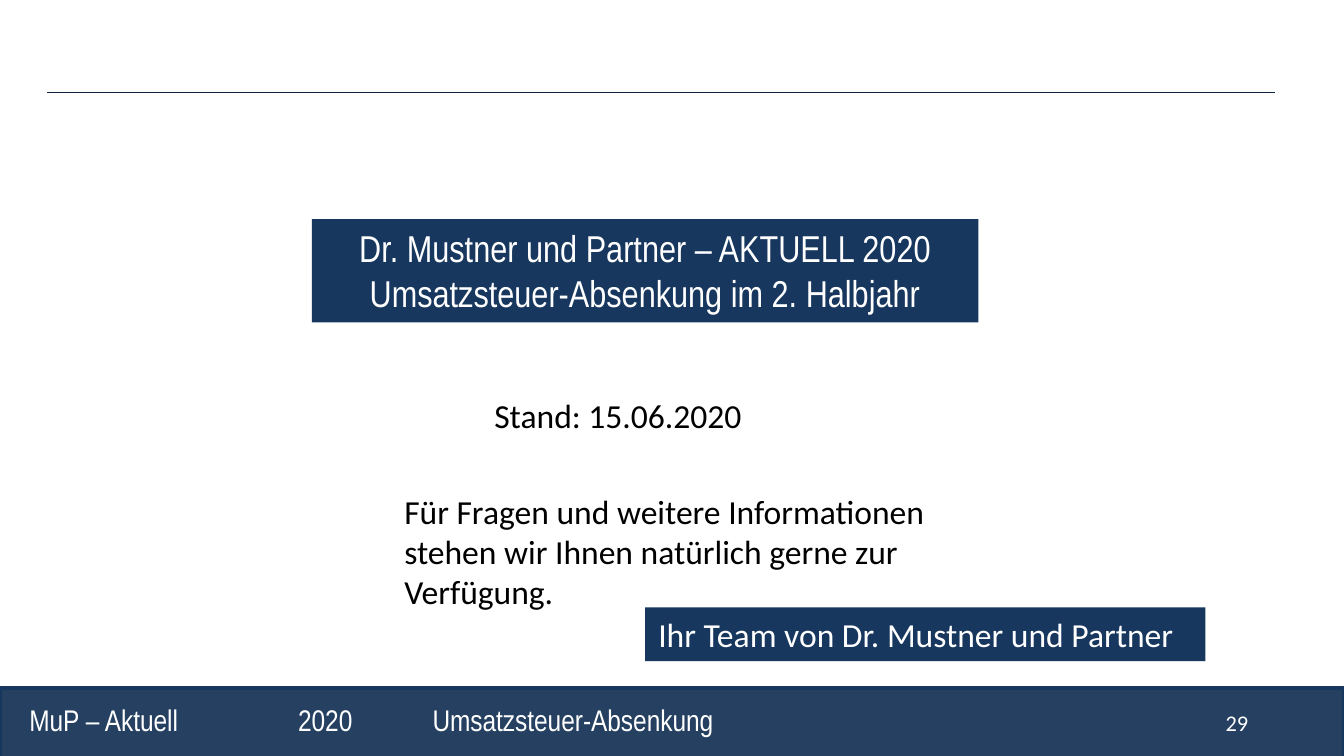
import pptx
import pptx.util
from lxml import etree
from pptx.dml.color import RGBColor
from pptx.enum.shapes import MSO_CONNECTOR, MSO_SHAPE
from pptx.enum.text import MSO_ANCHOR, PP_ALIGN
from pptx.oxml.ns import qn

Inches, Pt = pptx.util.Inches, pptx.util.Pt

COLORS = {
    "rule": "0F243E",
    "band": "254061",
    "navy": "17375E",
    "white": "FFFFFF",
    "black": "000000",
}
NARROW, BODY = "Arial Narrow", "Calibri"
FIRM = "Dr. Mustner und Partner"


def color(name):
    return RGBColor.from_string(COLORS[name])


def add_tab_stops(paragraph, stops):
    tab_list = etree.SubElement(paragraph._p.get_or_add_pPr(), qn("a:tabLst"))
    for stop in stops:
        etree.SubElement(tab_list, qn("a:tab"), pos=str(Inches(stop)), algn="l")


def write(frame, lines, size, font, ink, align=PP_ALIGN.LEFT, stops=()):
    frame.word_wrap = True
    frame.vertical_anchor = MSO_ANCHOR.TOP
    frame.text = "\n".join(lines)
    for paragraph in frame.paragraphs:
        if stops:
            add_tab_stops(paragraph, stops)
        paragraph.alignment = align
        paragraph.font.size = Pt(size)
        paragraph.font.name = font
        paragraph.font.color.rgb = color(ink)


def add_text(slide, box, lines, size, font, ink, stops=()):
    label = slide.shapes.add_textbox(*map(Inches, box))
    write(label.text_frame, lines, size, font, ink, stops=stops)


def add_panel(slide, box, fill, border=None):
    panel = slide.shapes.add_shape(MSO_SHAPE.RECTANGLE, *map(Inches, box))
    panel.shadow.inherit = False
    panel.fill.solid()
    panel.fill.fore_color.rgb = color(fill)
    if border:
        panel.line.color.rgb = color(border)
        panel.line.width = Pt(2)
    else:
        panel.line.fill.background()
    return panel


def add_header_rule(slide, left, top, width):
    rule = slide.shapes.add_connector(
        MSO_CONNECTOR.STRAIGHT,
        Inches(left), Inches(top), Inches(left + width), Inches(top))
    rule.line.color.rgb = color("rule")
    rule.line.width = Pt(0.75)
    etree.SubElement(rule._element.spPr, qn("a:effectLst"))


def add_footer(slide, left, top, width, height):
    add_panel(slide, (left, top, width, height), "band", border="navy")
    # Page number, then the running title in three columns
    add_text(slide, (left + 9.02, top + 0.11, 0.71, 0.3), ["29"],
             12, BODY, "white")
    add_text(slide, (left + 0.12, top + 0.05, 9.37, 0.37),
             ["MuP – Aktuell\t2020\tUmsatzsteuer-Absenkung"],
             16, NARROW, "white", stops=(2, 3))


def add_closing(slide, left, top, width):
    # Title panel
    title = add_panel(slide, (left, top, width, 0.77), "navy")
    write(title.text_frame,
          [f"{FIRM} – AKTUELL 2020", "Umsatzsteuer-Absenkung im 2. Halbjahr"],
          20, NARROW, "white", PP_ALIGN.CENTER)

    # Date and offer of help
    add_text(slide, (left + 1.26, top + 1.26, 2.13, 0.4),
             ["Stand: 15.06.2020"], 18, BODY, "black")
    add_text(slide, (left + 0.59, top + 1.97, 4.14, 1.01),
             ["Für Fragen und weitere Informationen stehen wir Ihnen "
              "natürlich gerne zur Verfügung."], 18, BODY, "black")

    # Signature panel
    signature = add_panel(slide, (left + 2.48, top + 2.89, 4.17, 0.4), "navy")
    write(signature.text_frame, [f"Ihr Team von {FIRM}"], 18, BODY, "white")


def main():
    deck = pptx.Presentation()
    # Widescreen, 16:9
    deck.slide_width = Inches(10)
    deck.slide_height = deck.slide_width * 9 // 16
    slide = deck.slides.add_slide(deck.slide_layouts[6])
    add_header_rule(slide, 0.35, 0.69, 9.14)
    add_footer(slide, 0, 5.12, 10, 0.52)
    add_closing(slide, 2.32, 1.63, 4.96)
    deck.save("out.pptx")


if __name__ == "__main__":
    main()
